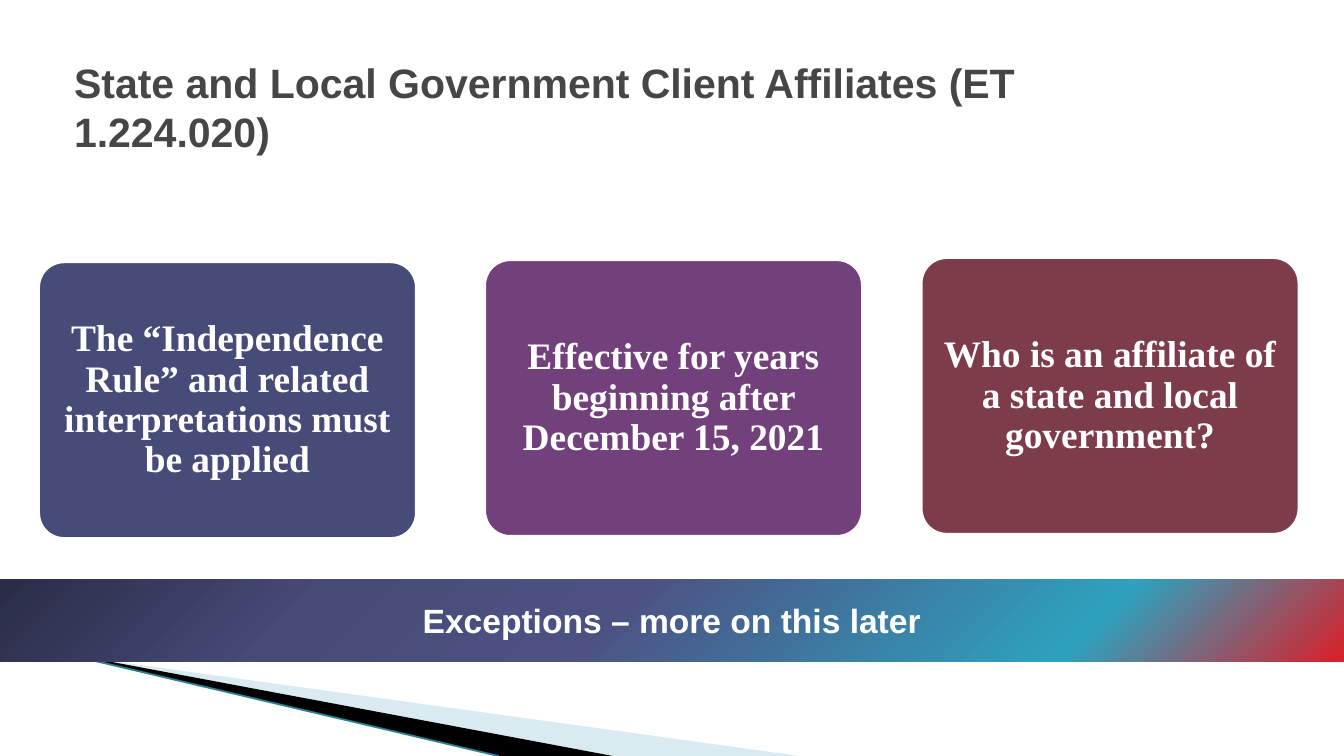
"""Build the slide on state and local government client affiliates."""
from lxml import etree
from pptx import Presentation
from pptx import util as u
from pptx.dml.color import RGBColor
from pptx.enum import shapes, text
from pptx.oxml import parse_xml
from pptx.oxml.ns import nsdecls, qn

COLORS = {
    "title": "464646", "white": "FFFFFF", "black": "000000",
    "blue": "474B78", "purple": "72417B", "maroon": "7D3C4A",
    "pale": "A0CBDC", "teal": "2A8296",
}
GRADIENT = [(1, "2B2D48"), (24, "474B78"), (45, "4D5182"), (80, "2DA2BF"), (100, "DA1F28")]


def color(name):
    return RGBColor.from_string(COLORS[name])


def style_text(shape, wording, font_name, size, color_name, alignment, anchor, margins):
    frame = shape.text_frame
    frame.word_wrap = True
    frame.auto_size = text.MSO_AUTO_SIZE.NONE
    frame.vertical_anchor = anchor
    frame.margin_left = frame.margin_right = u.Cm(margins[0])
    frame.margin_top = frame.margin_bottom = u.Cm(margins[1])
    paragraph = frame.paragraphs[0]
    paragraph.text = wording
    paragraph.alignment = alignment
    paragraph.font.name = font_name
    paragraph.font.size = u.Pt(size)
    paragraph.font.bold = True
    paragraph.font.color.rgb = color(color_name)
    return paragraph


presentation = Presentation()
presentation.slide_width, presentation.slide_height = u.Cm(25.4), u.Cm(14.29)
slide = presentation.slides.add_slide(presentation.slide_layouts[5])

wedges = [
    ("pale", [(1.4, 12.4), (15.11, 14.29), (11.58, 14.29)]),
    ("black", [(1.35, 12.37), (11.58, 14.29), (9.45, 14.29), (1.37, 12.4)]),
]
for fill_name, points in wedges:
    corners = [(u.Cm(x), u.Cm(y)) for x, y in points]
    builder = slide.shapes.build_freeform(*corners[0])
    builder.add_line_segments(corners[1:], close=True)
    wedge = builder.convert_to_shape()
    wedge.shadow.inherit = False
    wedge.fill.solid()
    wedge.fill.fore_color.rgb = color(fill_name)
    wedge.line.fill.background()
    if fill_name == "pale":
        fill_color = wedge.fill._xPr.find(qn("a:solidFill"))[0]
        etree.SubElement(fill_color, qn("a:alpha"), val="40000")

edge = slide.shapes.add_connector(
    shapes.MSO_CONNECTOR.STRAIGHT, u.Cm(0), u.Cm(12.07), u.Cm(9.42), u.Cm(14.29))
edge.line.color.rgb = color("teal")
edge.line.width = u.Pt(0.95)
etree.SubElement(edge._element.spPr, qn("a:effectLst"))

title = slide.shapes.title
title.left, title.top, title.width, title.height = u.Cm(1.4), u.Cm(1.3), u.Cm(21.59), u.Cm(1.65)
style_text(title, "State and Local Government Client Affiliates (ET 1.224.020)", "Arial", 22,
           "title", text.PP_ALIGN.LEFT, text.MSO_ANCHOR.BOTTOM, (0, 0))

cards = [
    (0.68, 4.9, "blue", "The “Independence Rule” and related interpretations must be applied"),
    (9.11, 4.86, "purple", "Effective for years beginning after December 15, 2021"),
    (17.36, 4.82, "maroon", "Who is an affiliate of a state and local government?"),
]
for left, top, fill_name, wording in cards:
    card = slide.shapes.add_shape(
        shapes.MSO_SHAPE.ROUNDED_RECTANGLE, u.Cm(left), u.Cm(top), u.Cm(7.24), u.Cm(5.33))
    card.adjustments[0] = 0.1
    card.shadow.inherit = False
    card.fill.solid()
    card.fill.fore_color.rgb = color(fill_name)
    card.line.color.rgb = color("white")
    card.line.width = u.Pt(4.33)
    paragraph = style_text(card, wording, "Times New Roman", 20, "white",
                           text.PP_ALIGN.CENTER, text.MSO_ANCHOR.MIDDLE, (0.25, 0.23))
    paragraph.line_spacing = 0.9

band = slide.shapes.add_shape(
    shapes.MSO_SHAPE.RECTANGLE, u.Cm(0), u.Cm(10.95), u.Cm(25.4), u.Cm(1.55))
band.shadow.inherit = False
band.line.fill.background()
stops = "".join(
    f'<a:gs pos="{position * 1000}"><a:srgbClr val="{value}"/></a:gs>'
    for position, value in GRADIENT)
band._element.spPr.find(qn("a:prstGeom")).addnext(parse_xml(
    f'<a:gradFill {nsdecls("a")} rotWithShape="1"><a:gsLst>{stops}</a:gsLst>'
    '<a:lin ang="2700000" scaled="0"/></a:gradFill>'))
style_text(band, "Exceptions – more on this later", "Arial", 18, "white",
           text.PP_ALIGN.CENTER, text.MSO_ANCHOR.MIDDLE, (0.25, 0.13))

presentation.save("out.pptx")
